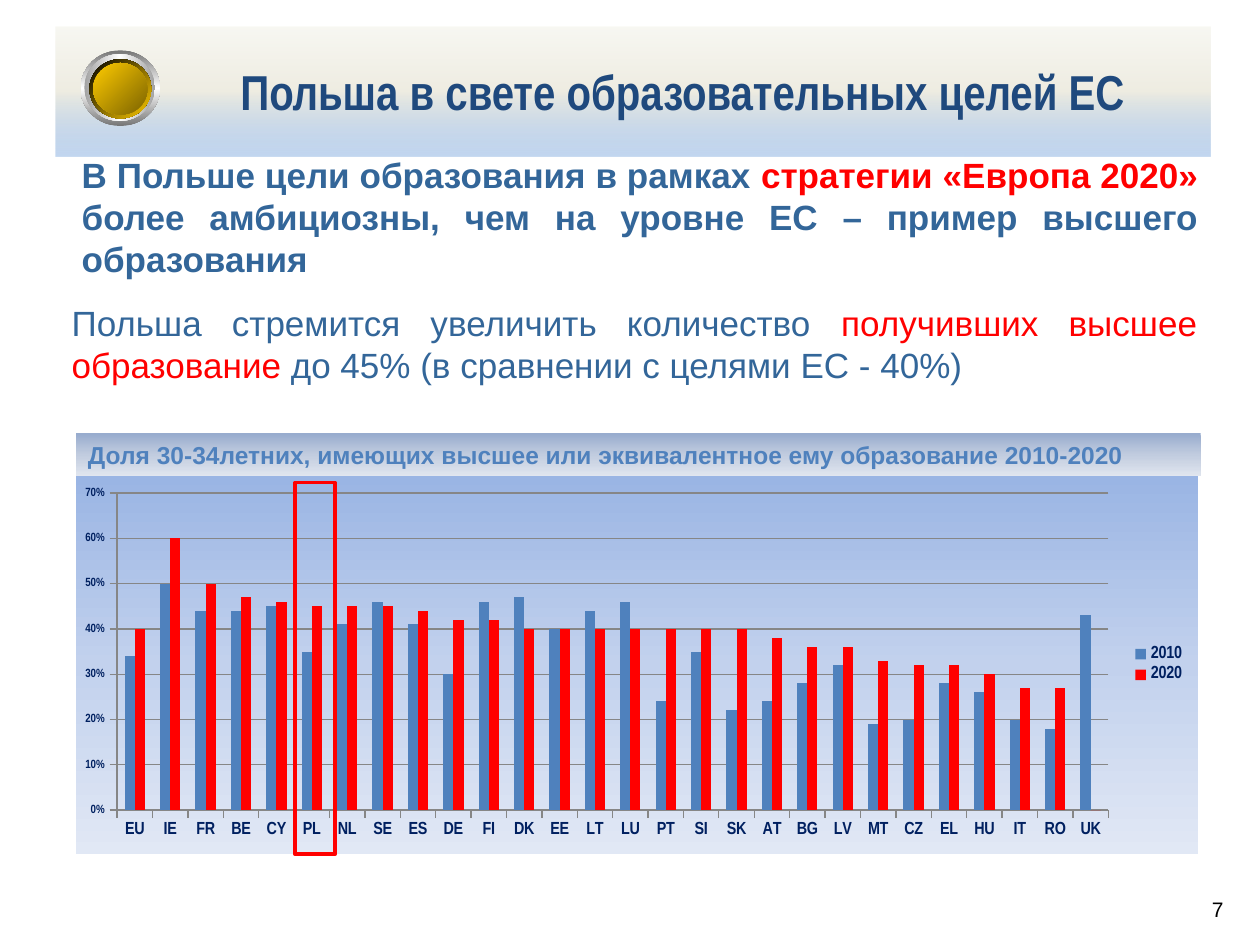
"""Build the slide on Poland and the EU education targets."""
from lxml.etree import SubElement
from pptx import Presentation
from pptx.chart.data import CategoryChartData
from pptx.dml.color import RGBColor
from pptx.enum.chart import XL_CHART_TYPE, XL_LEGEND_POSITION, XL_TICK_MARK
from pptx.enum.shapes import MSO_SHAPE
from pptx.enum.text import MSO_ANCHOR, PP_ALIGN
from pptx.oxml import parse_xml
from pptx.oxml.ns import nsdecls, qn
from pptx.util import Inches, Pt

BLACK = RGBColor(0x00, 0x00, 0x00)
RED = RGBColor(0xFF, 0x00, 0x00)
NAVY = RGBColor(0x00, 0x20, 0x60)
TITLE_BLUE = RGBColor(0x1F, 0x49, 0x7D)
TEXT_BLUE = RGBColor(0x33, 0x66, 0x99)
BAR_BLUE = RGBColor(0x4F, 0x81, 0xBD)
GRID_GRAY = RGBColor(0x86, 0x86, 0x86)

TITLE_STOPS = [(0, "8BB2E2", 52), (50, "EEECE1", 100), (100, "F7F7F2", 100)]
CAPTION_STOPS = [(0, "98ACCE", 100), (50, "C1CCDF", 100), (100, "E1E6EF", 100)]
CHART_STOPS = [(0, "9AB5E4", 100), (50, "C2D1ED", 100), (100, "E1E8F5", 100)]
BUTTON_RINGS = [
    ((0.64, 0.4, 0.63, 0.6), [(0, "767676", 100), (50, "FFFFFF", 100), (100, "767676", 100)], 90),
    ((0.67, 0.43, 0.56, 0.53), [(0, "A2A2A2", 100), (50, "FFFFFF", 100), (100, "A2A2A2", 100)], 0),
    ((0.71, 0.47, 0.49, 0.47), [(0, "000000", 100), (100, "FFCC00", 100)], 45),
    ((0.74, 0.5, 0.43, 0.41), [(0, "FFCC00", 100), (100, "7C6300", 100)], 45),
]

COUNTRIES = ("EU IE FR BE CY PL NL SE ES DE FI DK EE LT LU PT SI SK AT BG LV MT "
             "CZ EL HU IT RO UK").split()
SHARES = {
    "2010": [0.34, 0.5, 0.44, 0.44, 0.45, 0.35, 0.41, 0.46, 0.41, 0.3, 0.46, 0.47, 0.4, 0.44,
             0.46, 0.24, 0.35, 0.22, 0.24, 0.28, 0.32, 0.19, 0.2, 0.28, 0.26, 0.2, 0.18, 0.43],
    "2020": [0.4, 0.6, 0.5, 0.47, 0.46, 0.45, 0.45, 0.45, 0.44, 0.42, 0.42, 0.4, 0.4, 0.4,
             0.4, 0.4, 0.4, 0.4, 0.38, 0.36, 0.36, 0.33, 0.32, 0.32, 0.3, 0.27, 0.27, 0],
}


def gradient(stops, angle):
    """Return a linear gradient fill element."""
    fill = parse_xml(f'<a:gradFill {nsdecls("a")} rotWithShape="1"><a:gsLst/>'
                     f'<a:lin ang="{angle * 60000}" scaled="0"/></a:gradFill>')
    for pos, color, opacity in stops:
        gs = SubElement(fill[0], qn("a:gs"), pos=str(pos * 1000))
        clr = SubElement(gs, qn("a:srgbClr"), val=color)
        if opacity < 100:
            SubElement(clr, qn("a:alpha"), val=str(opacity * 1000))
    return fill


def add_box(slide, kind, box, stops=None, angle=90):
    """Add a borderless preset shape, with a gradient if stops are given."""
    sp = slide.shapes.add_shape(kind, *map(Inches, box))
    sp.shadow.inherit = False
    sp.line.fill.background()
    sp.fill.background()
    if stops:
        spPr = sp.element.spPr
        spPr.replace(spPr.find(qn("a:noFill")), gradient(stops, angle))
    return sp


def style_font(font, size, color, bold=False, name="Arial"):
    """Set the size, colour, weight and typeface of a font."""
    font.size, font.bold, font.name = Pt(size), bold, name
    font.color.rgb = color


def write(sp, runs, size, align, bold=False, name="Arial", anchor=MSO_ANCHOR.TOP):
    """Write one paragraph of coloured runs into a shape."""
    tf = sp.text_frame
    tf.word_wrap = True
    tf.vertical_anchor = anchor
    p = tf.paragraphs[0]
    p.alignment = align
    for text, color in runs:
        r = p.add_run()
        r.text = text
        style_font(r.font, size, color, bold, name)
    return p


def add_text(slide, box, runs, size, align, **style):
    """Add a text box."""
    write(slide.shapes.add_textbox(*map(Inches, box)), runs, size, align, **style)


def add_title(slide):
    """Add the title band and its round button."""
    band = add_box(slide, MSO_SHAPE.RECTANGLE, (0.44, 0.21, 9.17, 1.03), TITLE_STOPS, 270)
    p = write(band, [("Польша в свете образовательных целей ЕС", TITLE_BLUE)], 28,
              PP_ALIGN.CENTER, bold=True, name="Arial Narrow", anchor=MSO_ANCHOR.MIDDLE)
    pPr = p._p.get_or_add_pPr()
    pPr.set("marL", str(Inches(0.78)))
    pPr.set("indent", "0")
    for box, stops, angle in BUTTON_RINGS:
        add_box(slide, MSO_SHAPE.OVAL, box, stops, angle)


def style_axis(axis, size):
    """Style an axis line, its ticks and its labels."""
    axis.major_tick_mark = XL_TICK_MARK.OUTSIDE
    axis.minor_tick_mark = XL_TICK_MARK.NONE
    axis.format.line.color.rgb = GRID_GRAY
    style_font(axis.tick_labels.font, size, NAVY, True, "Arial Narrow")


def set_backdrop_and_layout(chart, x, y, w, h):
    """Give the chart its gradient and fix the inner plot area."""
    spPr = parse_xml(f'<c:spPr {nsdecls("c", "a")}><a:ln><a:noFill/></a:ln></c:spPr>')
    spPr.insert(0, gradient(CHART_STOPS, 90))
    chart.element.chart.addnext(spPr)
    area = chart.element.chart.plotArea
    for old in area.findall(qn("c:layout")):
        area.remove(old)
    layout = parse_xml(f'<c:layout {nsdecls("c")}><c:manualLayout/></c:layout>')
    values = {"layoutTarget": "inner", "xMode": "edge", "yMode": "edge",
              "x": x, "y": y, "w": w, "h": h}
    for tag, value in values.items():
        SubElement(layout[0], qn(f"c:{tag}"), val=str(value))
    area.insert(0, layout)


def add_share_chart(slide):
    """Add the clustered columns of shares by country."""
    data = CategoryChartData(number_format="0%")
    data.categories = COUNTRIES
    for name, values in SHARES.items():
        data.add_series(name, values)
    box = map(Inches, (0.6, 3.77, 8.91, 3.01))
    chart = slide.shapes.add_chart(XL_CHART_TYPE.COLUMN_CLUSTERED, *box, data).chart
    chart.has_title = False
    style_font(chart.font, 10, BLACK, name="Arial Narrow")
    plot = chart.plots[0]
    plot.gap_width, plot.overlap, plot.vary_by_categories = 150, 0, False
    for series, color in zip(plot.series, (BAR_BLUE, RED)):
        series.format.fill.solid()
        series.format.fill.fore_color.rgb = color
    style_axis(chart.category_axis, 10)
    axis = chart.value_axis
    style_axis(axis, 6.8)
    axis.minimum_scale, axis.maximum_scale, axis.major_unit = 0, 0.7, 0.1
    axis.tick_labels.number_format = "0%"
    axis.tick_labels.number_format_is_linked = False
    axis.major_gridlines.format.line.color.rgb = GRID_GRAY
    chart.has_legend = True
    chart.legend.position = XL_LEGEND_POSITION.RIGHT
    chart.legend.include_in_layout = False
    style_font(chart.legend.font, 10, NAVY, True, "Arial Narrow")
    set_backdrop_and_layout(chart, 0.037, 0.048, 0.883, 0.836)


def add_highlight(slide):
    """Frame the columns of Poland."""
    frame = add_box(slide, MSO_SHAPE.RECTANGLE, (2.34, 3.83, 0.32, 2.95))
    frame.line.color.rgb = RED
    frame.line.width = Pt(2)


def main():
    """Build and save the slide."""
    prs = Presentation()
    prs.slide_width, prs.slide_height = Inches(10), Inches(7.5)
    slide = prs.slides.add_slide(prs.slide_layouts[6])
    add_text(slide, (9.37, 7.06, 0.59, 0.31), [("7", BLACK)], 12, PP_ALIGN.CENTER,
             anchor=MSO_ANCHOR.MIDDLE)
    add_share_chart(slide)
    caption = add_box(slide, MSO_SHAPE.RECTANGLE, (0.6, 3.44, 8.93, 0.34), CAPTION_STOPS)
    write(caption, [("Доля 30-34летних, имеющих высшее или эквивалентное ему образование "
                     "2010-2020", BAR_BLUE)], 14, PP_ALIGN.LEFT, bold=True)
    add_highlight(slide)
    add_text(slide, (0.47, 2.34, 9.13, 0.77),
             [("Польша стремится увеличить количество ", TEXT_BLUE),
              ("получивших высшее образование", RED),
              (" до 45% (в сравнении с целями ЕС - 40%)", TEXT_BLUE)], 20, PP_ALIGN.JUSTIFY)
    add_title(slide)
    add_text(slide, (0.55, 1.17, 9.06, 1.11),
             [("В Польше цели образования в рамках ", TEXT_BLUE),
              ("стратегии «Европа 2020» ", RED),
              ("более амбициозны, чем на уровне ЕС – пример высшего образования", TEXT_BLUE)],
             20, PP_ALIGN.JUSTIFY, bold=True)
    prs.save("out.pptx")


if __name__ == "__main__":
    main()
